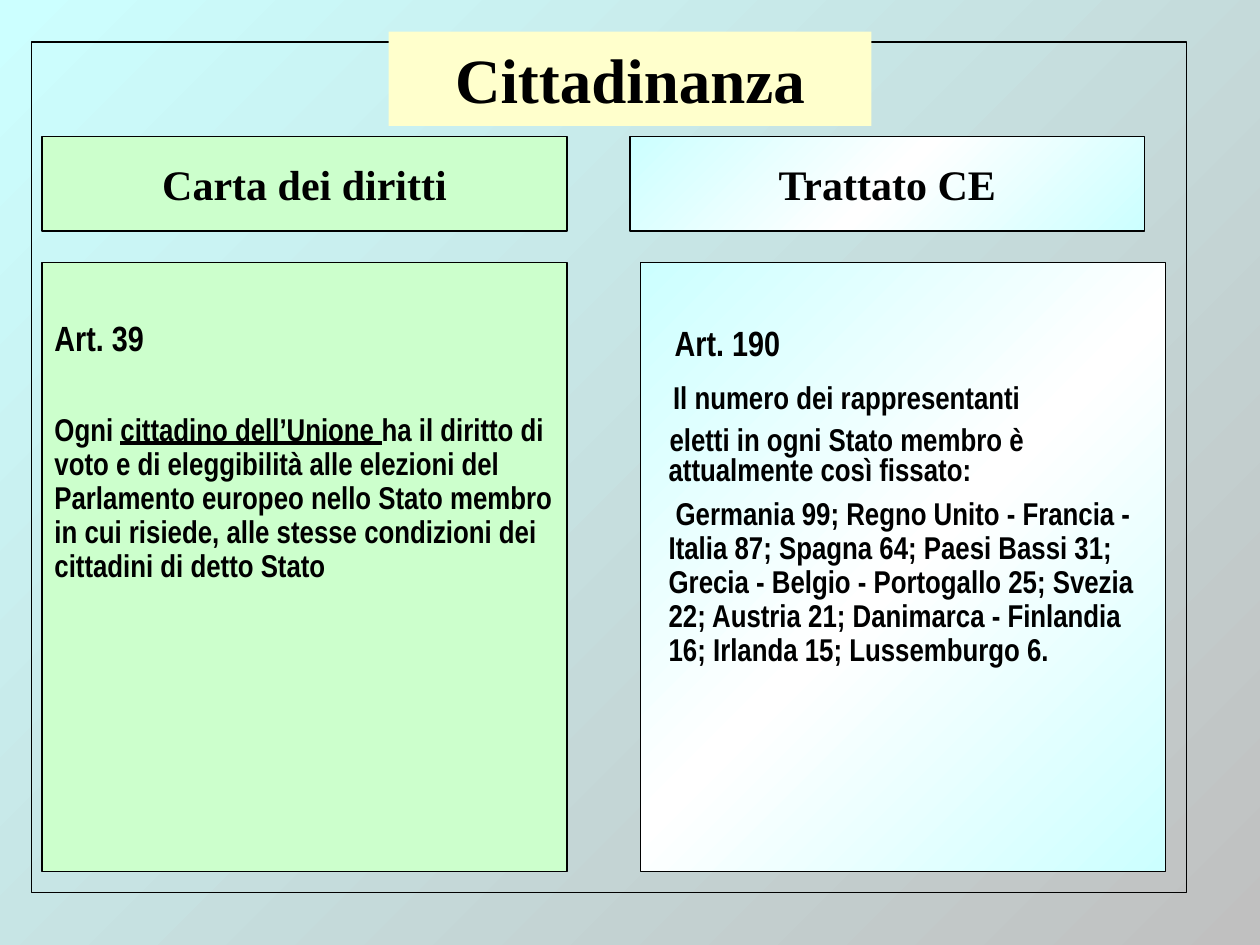
import copy
from dataclasses import dataclass

import pptx
import pptx.dml.color
import pptx.enum.shapes
import pptx.enum.text
import pptx.oxml.ns
import pptx.util

Pt = pptx.util.Pt
ALIGN = pptx.enum.text.PP_ALIGN
ANCHOR = pptx.enum.text.MSO_ANCHOR

COLOURS = {
    "black": "000000",
    "grey": "C0C0C0",
    "aqua": "CCFFFF",
    "white": "FFFFFF",
    "green": "CCFFCC",
    "cream": "FFFFCC",
}
SHEEN = ("aqua", "white", "aqua")
SERIF = {"name": "Times New Roman", "bold": True}
NARROW = {"name": "Arial Narrow", "bold": True}


@dataclass
class Panel:
    """A rectangle; one fill colour is solid, several make a gradient."""
    box: tuple[float, float, float, float]
    fill: tuple[str, ...] = ()
    line: float = 0
    heading: str = ""
    size: float = 24
    wrap: bool = False


@dataclass
class Passage:
    """A paragraph; runs are (text, underlined) pairs."""
    runs: tuple[tuple[str, bool], ...]
    size: float = 18
    spacing: float = 0.9
    before: float = 6
    indent: float = 0


@dataclass
class Column:
    box: tuple[float, float, float, float]
    top_inset: float
    left_indent: float
    passages: tuple[Passage, ...]


def rgb(name: str) -> pptx.dml.color.RGBColor:
    return pptx.dml.color.RGBColor.from_string(COLOURS[name])


def apply(target, values: dict) -> None:
    for key, value in values.items():
        setattr(target, key, value)


def style_run(run, size: float, face: dict) -> None:
    apply(run.font, {**face, "size": Pt(size)})
    run.font.color.rgb = rgb("black")


def paint_gradient(fill, element, names: tuple[str, ...]) -> None:
    """Spread the colours evenly, from bottom right to top left."""
    fill.gradient()
    fill.gradient_angle = 135
    stops = element.find(".//" + pptx.oxml.ns.qn("a:gsLst"))
    while len(stops) < len(names):
        stops.insert(1, copy.deepcopy(stops[0]))
    for index, (stop, name) in enumerate(zip(fill.gradient_stops, names)):
        stop.position = index / (len(names) - 1)
        stop.color.rgb = rgb(name)


def draw_panel(slide, panel: Panel) -> None:
    shape = slide.shapes.add_shape(
        pptx.enum.shapes.MSO_SHAPE.RECTANGLE, *map(Pt, panel.box))
    shape.shadow.inherit = False
    if len(panel.fill) > 1:
        paint_gradient(shape.fill, shape._element, panel.fill)
    elif panel.fill:
        shape.fill.solid()
        shape.fill.fore_color.rgb = rgb(panel.fill[0])
    else:
        shape.fill.background()
    if panel.line:
        shape.line.color.rgb = rgb("black")
        shape.line.width = Pt(panel.line)
    else:
        shape.line.fill.background()
    if panel.heading:
        frame = shape.text_frame
        apply(frame, {"word_wrap": panel.wrap, "vertical_anchor": ANCHOR.MIDDLE})
        heading = frame.paragraphs[0]
        heading.alignment = ALIGN.CENTER
        run = heading.add_run()
        run.text = panel.heading
        style_run(run, panel.size, SERIF)


def draw_column(slide, column: Column) -> None:
    frame = slide.shapes.add_textbox(*map(Pt, column.box)).text_frame
    apply(frame, {"word_wrap": True, "margin_top": Pt(column.top_inset),
                  "vertical_anchor": ANCHOR.TOP})
    for index, passage in enumerate(column.passages):
        paragraph = frame.add_paragraph() if index else frame.paragraphs[0]
        apply(paragraph, {"alignment": ALIGN.LEFT, "line_spacing": passage.spacing,
                          "space_before": Pt(passage.before)})
        properties = paragraph._p.get_or_add_pPr()
        properties.set("marL", str(Pt(column.left_indent)))
        properties.set("indent", str(Pt(passage.indent)))
        for text, underlined in passage.runs:
            run = paragraph.add_run()
            run.text = text
            style_run(run, passage.size, {**NARROW, "underline": underlined})


# Panels behind the text, then title and column headings
BACK_PANELS = (
    Panel((366, 150, 300, 348), SHEEN, 0.75),
    Panel((24, 150, 300, 348), ("green",), 0.75),
    Panel((18, 24, 660, 486), line=1),
    Panel((222, 18, 276, 54), ("cream",), heading="Cittadinanza", size=36, wrap=True),
)
HEADINGS = (
    Panel((24, 78, 300, 54), ("green",), 0.75, "Carta dei diritti"),
    Panel((360, 78, 294, 54), SHEEN, 0.75, "Trattato CE"),
)

# Body text of the two columns
CHARTER = Column((24, 132, 300, 372), 49, 0, (
    Passage((("Art. 39", False),), size=20, spacing=1, before=0),
    Passage((
        ("Ogni ", False),
        ("cittadino dell’Unione ", True),
        ("ha il diritto di voto e di eleggibilità alle elezioni del Parlamento "
         "europeo nello Stato membro in cui risiede, alle stesse condizioni dei "
         "cittadini di detto Stato", False),
    ), before=31.5),
))
TREATY = Column((360, 144, 306, 360), 40, 15, (
    Passage((("Art. 190", False),), size=20, spacing=1, before=0, indent=3.5),
    Passage((("Il numero dei rappresentanti", False),),
            spacing=0.8, before=12, indent=2.5),
    Passage((("eletti in ogni Stato membro è attualmente così fissato:", False),),
            spacing=0.8, before=7, indent=0.5),
    Passage((("Germania 99; Regno Unito - Francia - Italia 87; Spagna 64; Paesi "
              "Bassi 31; Grecia - Belgio - Portogallo 25; Svezia 22; Austria 21; "
              "Danimarca - Finlandia 16; Irlanda 15; Lussemburgo 6.", False),),
            indent=4),
))


def main() -> None:
    deck = pptx.Presentation()
    apply(deck, {"slide_width": Pt(720), "slide_height": Pt(540)})
    slide = deck.slides.add_slide(deck.slide_layouts[6])
    paint_gradient(slide.background.fill, slide._element, ("grey", "aqua"))
    for panel in BACK_PANELS:
        draw_panel(slide, panel)
    for column in (CHARTER, TREATY):
        draw_column(slide, column)
    for panel in HEADINGS:
        draw_panel(slide, panel)
    deck.save("out.pptx")


if __name__ == "__main__":
    main()
